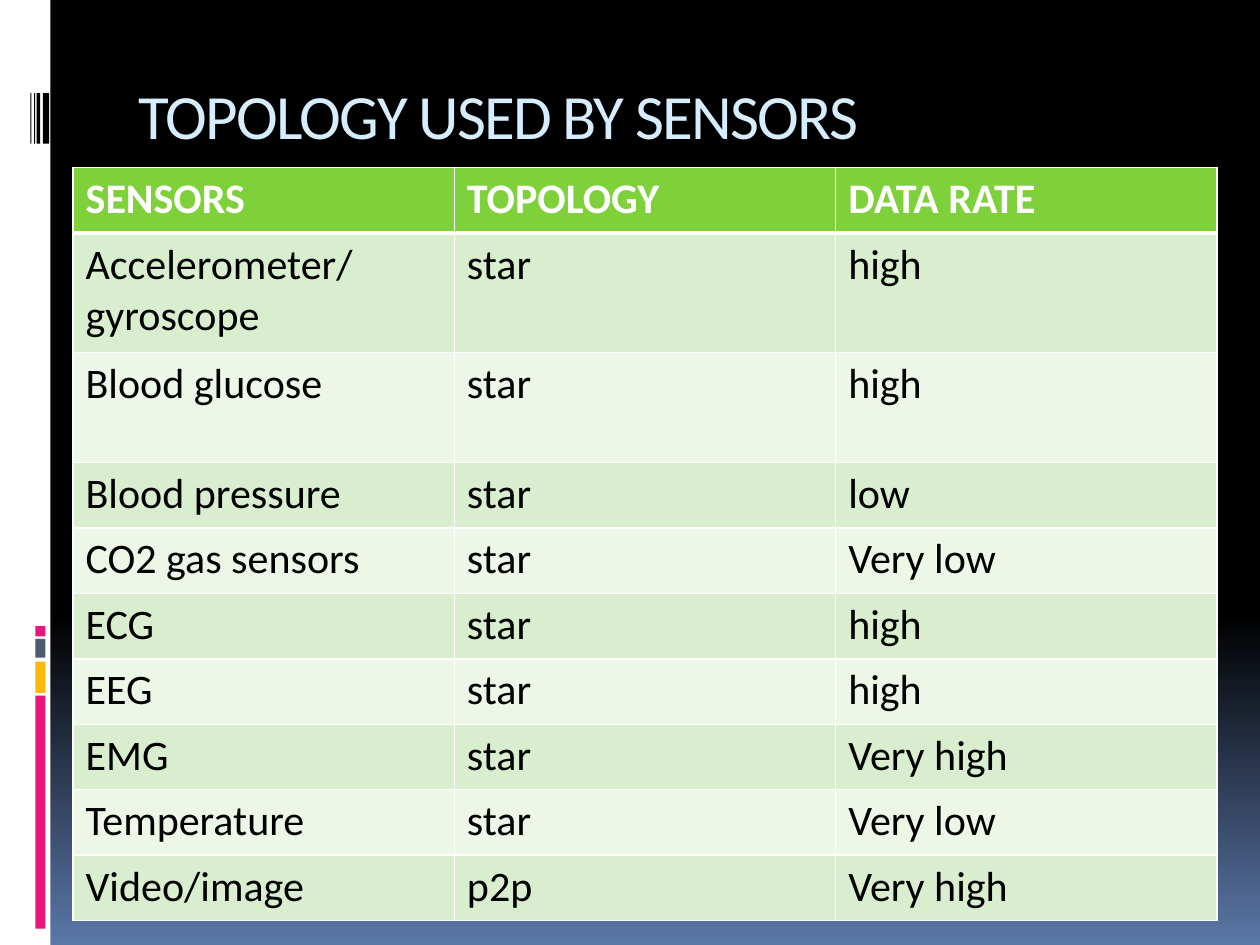
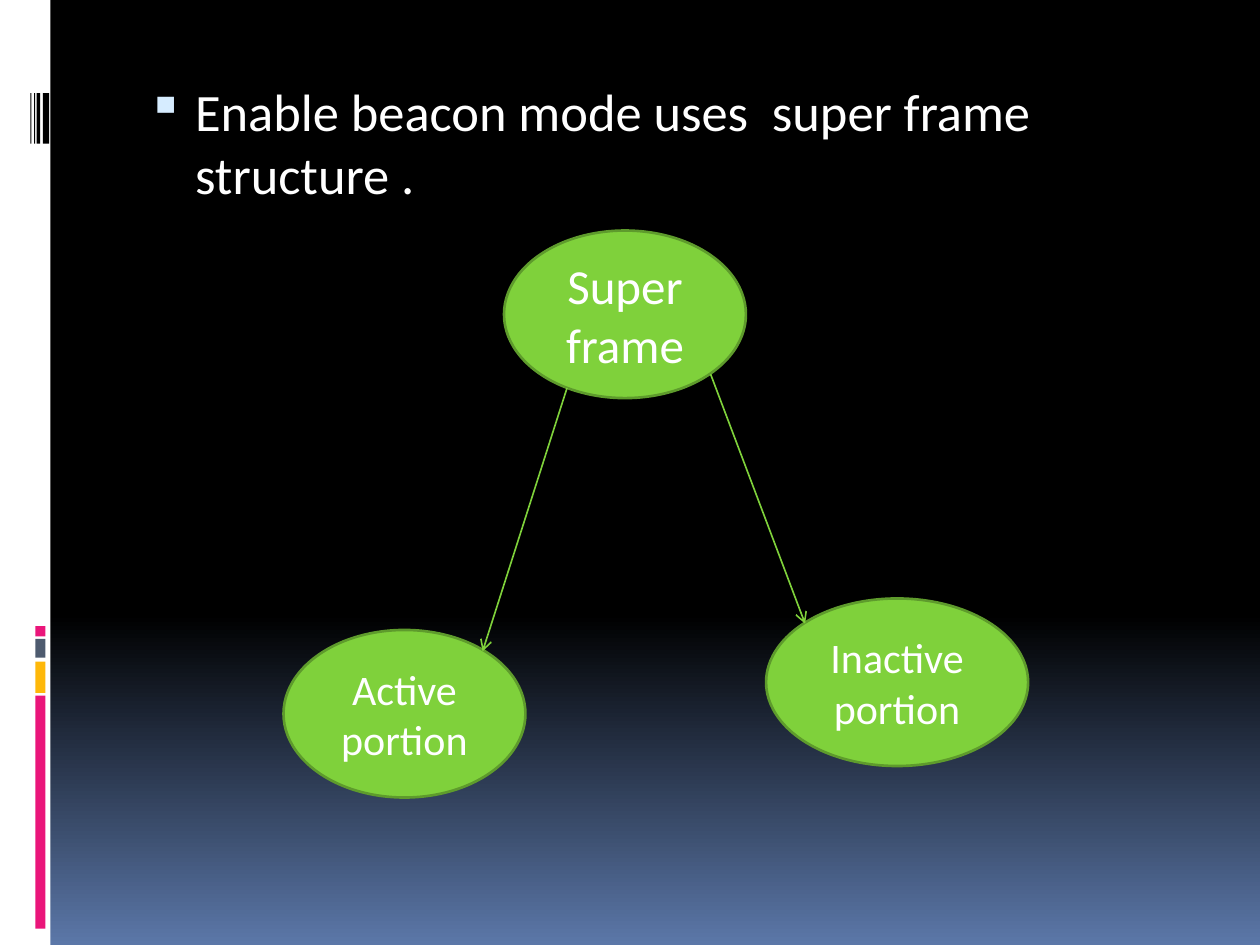
from dataclasses import dataclass

import lxml.etree
import pptx
import pptx.dml.color
import pptx.enum.dml
import pptx.enum.shapes
import pptx.enum.text
import pptx.oxml.ns
import pptx.util

Inches = pptx.util.Inches
Pt = pptx.util.Pt
qn = pptx.oxml.ns.qn


@dataclass(frozen=True)
class Theme:
    font: str = "Calibri"
    black: str = "000000"
    white: str = "FFFFFF"
    horizon: str = "5B77A8"
    pale_blue: str = "D6ECFF"
    pink: str = "EA157A"
    amber: str = "FEB80A"
    slate: str = "4E5B6F"
    green: str = "7FD13B"
    dark_green: str = "5E9B2C"
    odd_row: str = "D8EECE"
    even_row: str = "ECF7E8"
    title_size: int = 36
    bullet_size: int = 30
    root_size: int = 28
    body_size: int = 24


THEME = Theme()

# Left, top, width, height and colour of each piece of the side band
SIDE_BAND = [
    (0, 0, 0.4, 7.5, THEME.white),
    (0.28, 5.52, 0.08, 1.85, THEME.pink),
    (0.28, 5.25, 0.08, 0.25, THEME.amber),
    (0.28, 5.07, 0.08, 0.15, THEME.slate),
    (0.28, 4.97, 0.08, 0.08, THEME.pink),
] + [(left, 0.74, width, 0.4, THEME.black)
     for left, width in ((0.34, 0.05), (0.29, 0.03), (0.27, 0.01), (0.24, 0.01))]

SENSOR_ROWS = [
    ("SENSORS", "TOPOLOGY", "DATA RATE"),
    ("Accelerometer/gyroscope", "star", "high"),
    ("Blood glucose", "star", "high"),
    ("Blood pressure", "star", "low"),
    ("CO2 gas sensors", "star", "Very low"),
    ("ECG", "star", "high"),
    ("EEG", "star", "high"),
    ("EMG", "star", "Very high"),
    ("Temperature", "star", "Very low"),
    ("Video/image", "p2p", "Very high"),
]
ROW_HEIGHT = 0.52
TALL_ROWS = {1: 0.95, 2: 0.87}


def rgb(color):
    return pptx.dml.color.RGBColor.from_string(color)


def box(left, top, width, height):
    return Inches(left), Inches(top), Inches(width), Inches(height)


def write(text_frame, text, size, color, bold=False):
    """Set one paragraph of text, format its run and return the paragraph."""
    text_frame.text = text
    paragraph = text_frame.paragraphs[0]
    font = paragraph.runs[0].font
    font.name = THEME.font
    font.size = Pt(size)
    font.bold = bold
    font.color.rgb = rgb(color)
    return paragraph


def add_filled_shape(slide, kind, place, color):
    shape = slide.shapes.add_shape(kind, *box(*place))
    shape.shadow.inherit = False
    shape.fill.solid()
    shape.fill.fore_color.rgb = rgb(color)
    shape.line.fill.background()
    return shape


def add_slide(presentation, layout_index):
    """Add a slide with the gradient background and the side band."""
    slide = presentation.slides.add_slide(presentation.slide_layouts[layout_index])
    fill = slide.background.fill
    fill.gradient()
    fill.gradient_angle = 270
    stops = ((0.65, THEME.black), (1, THEME.horizon))
    for stop, (position, color) in zip(fill.gradient_stops, stops):
        stop.position = position
        stop.color.rgb = rgb(color)
    for *place, color in SIDE_BAND:
        add_filled_shape(slide, pptx.enum.shapes.MSO_SHAPE.RECTANGLE, place, color)
    return slide


def set_title(slide, text):
    title = slide.shapes.title
    title.left, title.top, title.width, title.height = box(1, 0.56, 8.5, 1)
    frame = title.text_frame
    paragraph = write(frame, text, THEME.title_size, THEME.pale_blue)
    frame.auto_size = pptx.enum.text.MSO_AUTO_SIZE.NONE
    frame.vertical_anchor = pptx.enum.text.MSO_ANCHOR.TOP
    paragraph.alignment = pptx.enum.text.PP_ALIGN.LEFT
    paragraph.runs[0]._r.get_or_add_rPr().set("spc", "-100")


def set_borders(cell, top=1, bottom=1):
    """Draw white borders; the widths of the top and bottom ones are in points."""
    properties = cell._tc.get_or_add_tcPr()
    sides = (("a:lnL", 1), ("a:lnR", 1), ("a:lnT", top), ("a:lnB", bottom))
    for position, (tag, width) in enumerate(sides):
        border = lxml.etree.Element(qn(tag), w=str(Pt(width)))
        fill = lxml.etree.SubElement(border, qn("a:solidFill"))
        lxml.etree.SubElement(fill, qn("a:srgbClr"), val=THEME.white)
        properties.insert(position, border)


def add_sensor_table(slide):
    heights = [TALL_ROWS.get(index, ROW_HEIGHT) for index in range(len(SENSOR_ROWS))]
    place = box(0.58, 1.33, 9.08, sum(heights))
    table = slide.shapes.add_table(len(SENSOR_ROWS), len(SENSOR_ROWS[0]), *place).table
    for row_index, values in enumerate(SENSOR_ROWS):
        table.rows[row_index].height = Inches(heights[row_index])
        header = row_index == 0
        if header:
            row_color = THEME.green
        else:
            row_color = THEME.odd_row if row_index % 2 else THEME.even_row
        for column_index, value in enumerate(values):
            cell = table.cell(row_index, column_index)
            write(cell.text_frame, value, THEME.body_size,
                  THEME.white if header else THEME.black, bold=header)
            cell.fill.solid()
            cell.fill.fore_color.rgb = rgb(row_color)
            set_borders(cell, top=3 if row_index == 1 else 1, bottom=3 if header else 1)


def add_bullet_text(slide, text):
    frame = slide.shapes.add_textbox(*box(1, 0.58, 8.5, 1.2)).text_frame
    frame.word_wrap = True
    paragraph = write(frame, text, THEME.bullet_size, THEME.white)
    paragraph.space_before = Pt(7)
    properties = paragraph._p.get_or_add_pPr()
    properties.set("marL", str(Inches(0.45)))
    properties.set("indent", str(Inches(-0.38)))
    color = lxml.etree.SubElement(properties, qn("a:buClr"))
    lxml.etree.SubElement(color, qn("a:srgbClr"), val=THEME.pale_blue)
    lxml.etree.SubElement(properties, qn("a:buSzPct"), val="95000")
    lxml.etree.SubElement(properties, qn("a:buChar"), char="▪")


def add_ellipse(slide, text, left, top, width, size):
    ellipse = add_filled_shape(slide, pptx.enum.shapes.MSO_SHAPE.OVAL,
                               (left, top, width, 1.33), THEME.green)
    ellipse.line.color.rgb = rgb(THEME.dark_green)
    ellipse.line.width = Pt(1.5)
    ellipse.text_frame.vertical_anchor = pptx.enum.text.MSO_ANCHOR.MIDDLE
    paragraph = write(ellipse.text_frame, text, size, THEME.white)
    paragraph.alignment = pptx.enum.text.PP_ALIGN.CENTER


def add_arrow(slide, start, end):
    arrow = slide.shapes.add_connector(pptx.enum.shapes.MSO_CONNECTOR.STRAIGHT,
                                       *map(Inches, start + end))
    arrow.line.color.rgb = rgb(THEME.green)
    arrow.line.width = Pt(0.94)
    lxml.etree.SubElement(arrow.line._get_or_add_ln(), qn("a:tailEnd"), type="arrow")
    lxml.etree.SubElement(arrow._element.spPr, qn("a:effectLst"))


def add_topology_slide(presentation):
    slide = add_slide(presentation, layout_index=5)
    set_title(slide, "TOPOLOGY USED BY SENSORS")
    add_sensor_table(slide)


def add_super_frame_slide(presentation):
    slide = add_slide(presentation, layout_index=6)
    add_bullet_text(slide, "Enable beacon mode uses  super frame structure .")
    add_ellipse(slide, "Super frame", 4, 1.83, 1.92, THEME.root_size)
    add_ellipse(slide, "Active portion", 2.25, 5, 1.92, THEME.body_size)
    add_ellipse(slide, "Inactive portion", 6.08, 4.75, 2.08, THEME.body_size)
    add_arrow(slide, (4.5, 3.08), (3.83, 5.17))
    add_arrow(slide, (5.64, 2.97), (6.39, 4.95))


def main():
    presentation = pptx.Presentation()
    presentation.slide_width = Inches(10)
    presentation.slide_height = Inches(7.5)
    add_topology_slide(presentation)
    add_super_frame_slide(presentation)
    presentation.save("out.pptx")


if __name__ == "__main__":
    main()
